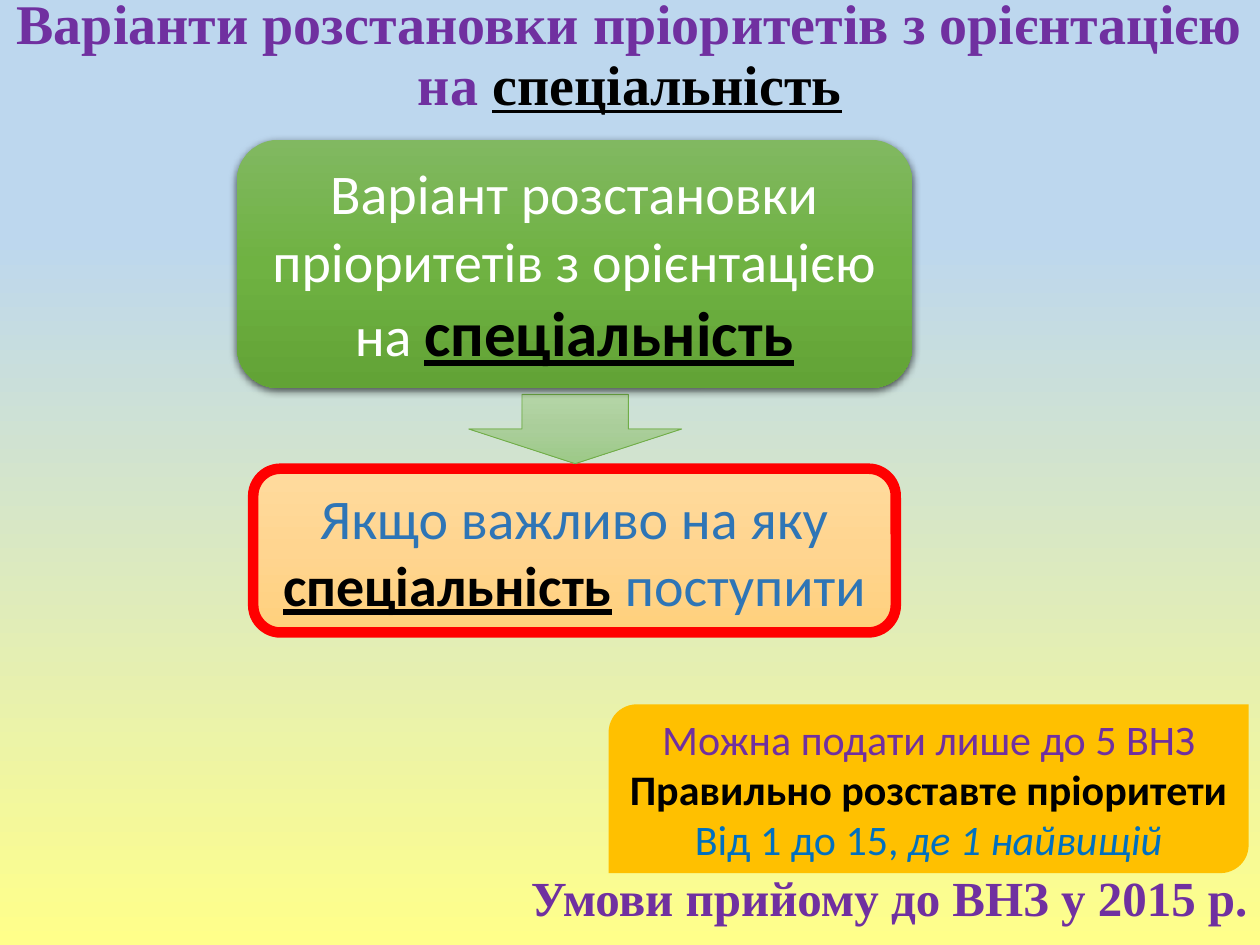
from dataclasses import dataclass

from lxml.etree import SubElement
from pptx import Presentation
from pptx.dml.color import RGBColor
from pptx.dml.fill import FillFormat
from pptx.enum.shapes import MSO_SHAPE
from pptx.enum.text import MSO_ANCHOR, PP_ALIGN
from pptx.oxml.ns import qn
from pptx.shapes.autoshape import Shape
from pptx.slide import Slide
from pptx.text.text import TextFrame
from pptx.util import Inches, Pt


@dataclass(frozen=True)
class Theme:
    heading_font: str = "Times New Roman"
    body_font: str = "Calibri"
    purple: str = "7030A0"
    black: str = "000000"
    white: str = "FFFFFF"
    blue: str = "2E75B6"
    bright_blue: str = "0070C0"
    red: str = "FF0000"
    gold: str = "FFC000"
    arrow_line: str = "70AD47"
    sky: tuple = ((25, "BDD7EE"), (100, "FFFF8A"))
    green: tuple = ((0, "81B861"), (50, "6FB242"), (100, "62A336"))
    pale_green: tuple = ((0, "B5D5A7"), (50, "AACE9A"), (100, "9CC987"))
    peach: tuple = ((0, "FFDB9E"), (50, "FFD590"), (100, "FFD07C"))
    heading_size: int = 32
    emphasis_size: int = 36
    footer_size: int = 28
    note_size: int = 24


THEME = Theme()


@dataclass(frozen=True)
class Phrase:
    text: str
    color: str
    size: int = THEME.heading_size
    font: str = THEME.body_font
    bold: bool = False
    italic: bool = False
    underline: bool = False


@dataclass(frozen=True)
class Block:
    """A filled shape; fill is one colour or a tuple of gradient stops."""
    preset: MSO_SHAPE
    box: tuple[float, float, float, float]
    fill: str | tuple
    lines: tuple[tuple[Phrase, ...], ...] = ()
    line_color: str | None = None
    line_width: float = 0
    vertical_inset: float = 0.05
    shadow: bool = False


def heading(text: str, color: str = THEME.purple, size: int = THEME.heading_size,
            underline: bool = False) -> Phrase:
    return Phrase(text, color, size, THEME.heading_font, bold=True, underline=underline)


def key_word(size: int = THEME.heading_size) -> Phrase:
    return Phrase("спеціальність", THEME.black, size, bold=True, underline=True)


BLOCKS = (
    Block(MSO_SHAPE.ROUND_2_DIAG_RECTANGLE, (4.83, 5.59, 5.08, 1.34), THEME.gold, (
        (Phrase("Можна подати лише до 5 ВНЗ", THEME.purple, THEME.note_size),),
        (Phrase("Правильно розставте пріоритети", THEME.black, THEME.note_size, bold=True),),
        (Phrase("Від 1 до 15, ", THEME.bright_blue, THEME.note_size),
         Phrase("де 1 найвищій", THEME.bright_blue, THEME.note_size, italic=True)),
    ), vertical_inset=0),
    Block(MSO_SHAPE.ROUNDED_RECTANGLE, (2.01, 3.72, 5.1, 1.3), THEME.peach, (
        (Phrase("Якщо важливо на яку ", THEME.blue), key_word(),
         Phrase(" поступити", THEME.blue)),
    ), THEME.red, 6),
    Block(MSO_SHAPE.DOWN_ARROW, (3.72, 3.13, 1.69, 0.55), THEME.pale_green,
          line_color=THEME.arrow_line, line_width=0.5),
    Block(MSO_SHAPE.ROUNDED_RECTANGLE, (1.88, 1.11, 5.36, 1.97), THEME.green, (
        (Phrase("Варіант розстановки пріоритетів з орієнтацією на ", THEME.white),
         key_word(THEME.emphasis_size)),
    ), shadow=True),
)


def apply_gradient(fill: FillFormat, owner: Slide | Shape, stops: tuple) -> None:
    """Fill from top to bottom with any number of (percent, colour) stops."""
    fill.gradient()
    fill.gradient_angle = 270
    stop_list = owner.element.find(".//" + qn("a:gsLst"))
    for old_stop in list(stop_list):
        stop_list.remove(old_stop)
    for percent, color in stops:
        stop = SubElement(stop_list, qn("a:gs"), pos=str(percent * 1000))
        SubElement(stop, qn("a:srgbClr"), val=color)


def add_soft_shadow(shape: Shape) -> None:
    effects = shape.element.find(".//" + qn("a:effectLst"))
    shadow = SubElement(effects, qn("a:outerShdw"), blurRad=str(Pt(4.5)),
                        dist=str(Pt(1.5)), dir="5400000", algn="ctr", rotWithShape="0")
    color = SubElement(shadow, qn("a:srgbClr"), val=THEME.black)
    SubElement(color, qn("a:alpha"), val="63000")


def write_lines(frame: TextFrame, lines: tuple[tuple[Phrase, ...], ...],
                align: PP_ALIGN = PP_ALIGN.CENTER, spacing: float = 1.0) -> None:
    frame.word_wrap = True
    frame.vertical_anchor = MSO_ANCHOR.MIDDLE
    for index, phrases in enumerate(lines):
        paragraph = frame.add_paragraph() if index else frame.paragraphs[0]
        paragraph.alignment = align
        paragraph.line_spacing = spacing
        for phrase in phrases:
            run = paragraph.add_run()
            run.text = phrase.text
            font = run.font
            font.name, font.size = phrase.font, Pt(phrase.size)
            font.bold, font.italic = phrase.bold, phrase.italic
            font.underline = phrase.underline
            font.color.rgb = RGBColor.from_string(phrase.color)


def add_block(slide: Slide, block: Block) -> None:
    shape = slide.shapes.add_shape(block.preset, *map(Inches, block.box))
    shape.shadow.inherit = False
    if isinstance(block.fill, str):
        shape.fill.solid()
        shape.fill.fore_color.rgb = RGBColor.from_string(block.fill)
    else:
        apply_gradient(shape.fill, shape, block.fill)
    if block.line_color:
        shape.line.color.rgb = RGBColor.from_string(block.line_color)
        shape.line.width = Pt(block.line_width)
    else:
        shape.line.fill.background()
    if block.shadow:
        add_soft_shadow(shape)
    frame = shape.text_frame
    frame.margin_top = frame.margin_bottom = Inches(block.vertical_inset)
    write_lines(frame, block.lines)


def add_footer_title(slide: Slide) -> None:
    title = slide.shapes.title
    title.left, title.top, title.width, title.height = map(Inches, (1, 6.79, 9, 0.71))
    footer = heading("Умови прийому до ВНЗ у 2015 р.", size=THEME.footer_size)
    write_lines(title.text_frame, ((footer,),), PP_ALIGN.RIGHT, 0.9)


def add_top_heading(slide: Slide) -> None:
    top = slide.shapes.add_textbox(*map(Inches, (0, 0, 10, 0.9)))
    write_lines(top.text_frame, ((
        heading("Варіанти розстановки пріоритетів з орієнтацією на "),
        heading("спеціальність", THEME.black, underline=True),
    ),), spacing=0.9)


def main() -> None:
    presentation = Presentation()
    presentation.slide_width, presentation.slide_height = Inches(10), Inches(7.5)
    slide = presentation.slides.add_slide(presentation.slide_layouts[5])
    apply_gradient(slide.background.fill, slide, THEME.sky)
    add_footer_title(slide)
    for block in BLOCKS:
        add_block(slide, block)
    add_top_heading(slide)
    presentation.save("out.pptx")


if __name__ == "__main__":
    main()
